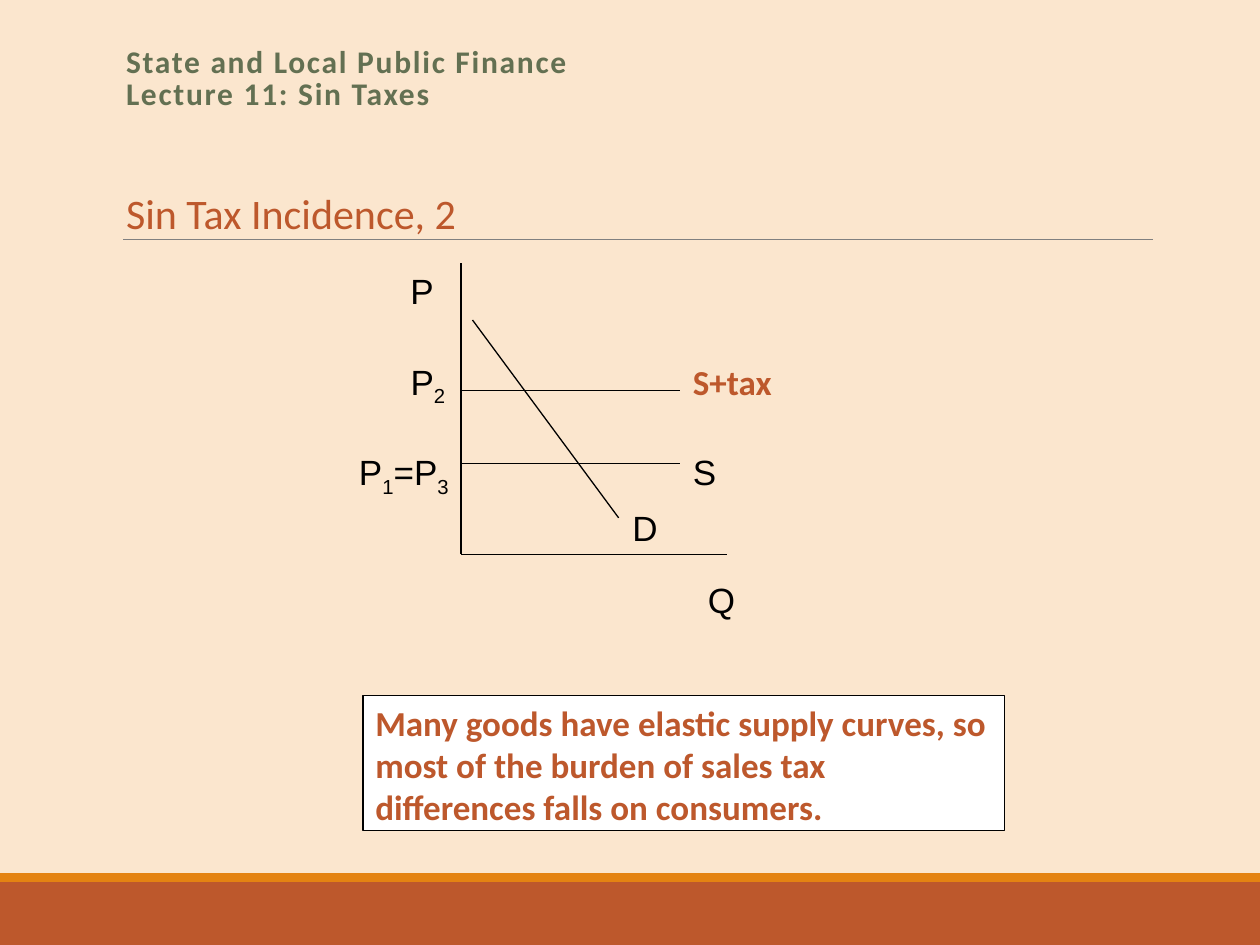
"""Build the sin tax incidence slide with its supply and demand diagram."""
from dataclasses import dataclass

from pptx import Presentation
from pptx import util as u
from pptx.dml.color import RGBColor
from pptx.enum import shapes, text
from pptx.oxml import parse_xml
from pptx.oxml.ns import nsdecls


@dataclass(frozen=True)
class Theme:
    background: str = "FBE6CE"
    accent: str = "BD582C"
    stripe: str = "E48312"
    heading: str = "637052"
    rule: str = "808080"
    ink: str = "000000"
    paper: str = "FFFFFF"
    text_font: str = "Calibri"
    label_font: str = "Arial"
    heading_size: float = 18
    topic_size: float = 24
    label_size: float = 20
    thin: float = 0.5
    line: float = 0.75


@dataclass(frozen=True)
class Area:
    left: float
    top: float
    width: float
    height: float

    def lengths(self) -> tuple:
        return tuple(u.Inches(n) for n in (self.left, self.top, self.width, self.height))


@dataclass(frozen=True)
class Segment:
    start: tuple[float, float]
    end: tuple[float, float]
    color: str
    weight: float


@dataclass(frozen=True)
class Label:
    """Spans alternate between normal and subscript text."""
    area: Area
    spans: tuple[str, ...]
    emphasis: bool = False


THEME = Theme()
ORIGIN_X, ORIGIN_Y = 3.66, 4.4
PRICE_TAXED, PRICE_BASE, SUPPLY_END = 3.1, 3.68, 5.4
TAXED_ROW, BASE_ROW = 2.81, 3.53


def curve(start: tuple[float, float], end: tuple[float, float]) -> Segment:
    return Segment(start, end, THEME.ink, THEME.line)


SEGMENTS = (
    Segment((0.98, 1.9), (9.15, 1.9), THEME.rule, THEME.thin),
    curve((ORIGIN_X, 2.09), (ORIGIN_X, ORIGIN_Y)),
    curve((ORIGIN_X, ORIGIN_Y), (5.77, ORIGIN_Y)),
    curve((ORIGIN_X, PRICE_BASE), (SUPPLY_END, PRICE_BASE)),
    curve((ORIGIN_X, PRICE_TAXED), (SUPPLY_END, PRICE_TAXED)),
    curve((3.75, 2.54), (4.91, 4.11)),
)
LABELS = (
    Label(Area(3.16, 2.09, 0.37, 0.58), ("P",)),
    Label(Area(5.52, 4.54, 0.37, 0.58), ("Q",)),
    Label(Area(SUPPLY_END, BASE_ROW, 0.62, 0.43), ("S",)),
    Label(Area(SUPPLY_END, TAXED_ROW, 1.19, 0.43), ("S+tax",), True),
    Label(Area(4.92, 3.97, 0.62, 0.43), ("D",)),
    Label(Area(2.75, BASE_ROW, 0.99, 0.43), ("P", "1", "=P", "3")),
    Label(Area(3.16, TAXED_ROW, 0.99, 0.43), ("P", "2")),
)


def style(span, size: float, color: str, font: str = THEME.text_font, bold: bool = False) -> None:
    span.font.size = u.Pt(size)
    span.font.name = font
    span.font.bold = bold
    span.font.color.rgb = RGBColor.from_string(color)


def place(box, area: Area) -> None:
    box.left, box.top, box.width, box.height = area.lengths()
    frame = box.text_frame
    frame.word_wrap = True
    frame.auto_size = text.MSO_AUTO_SIZE.NONE
    frame.vertical_anchor = text.MSO_ANCHOR.TOP


def fill_heading(box) -> None:
    place(box, Area(0.9, 0.33, 8.25, 0.65))
    box.text_frame.text = "State and Local Public Finance\vLecture 11: Sin Taxes"
    para = box.text_frame.paragraphs[0]
    para.alignment = text.PP_ALIGN.LEFT
    para.line_spacing = 0.85
    for span in para.runs:
        style(span, THEME.heading_size, THEME.heading, bold=True)
        span.font._element.set("spc", "100")


def fill_topic(box) -> None:
    place(box, Area(1, 1.48, 8.25, 4.4))
    frame = box.text_frame
    frame.margin_left = frame.margin_right = 0
    frame.text = "Sin Tax Incidence, 2"
    para = frame.paragraphs[0]
    para.line_spacing = 0.9
    para.space_before, para.space_after = u.Pt(6.8), u.Pt(1.1)
    properties = para._p.get_or_add_pPr()
    properties.set("marL", str(u.Inches(0.06)))
    properties.set("indent", str(u.Inches(-0.06)))
    properties.append(parse_xml(f"<a:buNone {nsdecls('a')}/>"))
    style(para.runs[0], THEME.topic_size, THEME.accent)


def add_rectangle(page, area: Area, color: str):
    box = page.shapes.add_shape(shapes.MSO_SHAPE.RECTANGLE, *area.lengths())
    box.shadow.inherit = False
    box.fill.solid()
    box.fill.fore_color.rgb = RGBColor.from_string(color)
    box.line.fill.background()
    return box


def add_segment(page, segment: Segment) -> None:
    ends = [u.Inches(n) for n in segment.start + segment.end]
    line = page.shapes.add_connector(shapes.MSO_CONNECTOR.STRAIGHT, *ends)
    line.line.color.rgb = RGBColor.from_string(segment.color)
    line.line.width = u.Pt(segment.weight)
    line._element.spPr.append(parse_xml(f"<a:effectLst {nsdecls('a')}/>"))


def add_label(page, label: Label) -> None:
    box = page.shapes.add_textbox(*label.area.lengths())
    place(box, label.area)
    para = box.text_frame.paragraphs[0]
    color = THEME.accent if label.emphasis else THEME.ink
    font = THEME.text_font if label.emphasis else THEME.label_font
    for index, words in enumerate(label.spans):
        span = para.add_run()
        span.text = words
        style(span, THEME.label_size, color, font, label.emphasis)
        if index % 2:
            span.font._element.set("baseline", "-25000")


def add_conclusion(page) -> None:
    area = Area(2.88, 5.52, 5.09, 1.07)
    box = add_rectangle(page, area, THEME.paper)
    box.line.color.rgb = RGBColor.from_string(THEME.ink)
    box.line.width = u.Pt(THEME.line)
    place(box, area)
    box.text_frame.margin_right = u.Inches(0.12)
    box.text_frame.text = ("Many goods have elastic supply curves, so most of the burden "
                           "of sales tax differences falls on consumers.")
    para = box.text_frame.paragraphs[0]
    para.alignment = text.PP_ALIGN.LEFT
    style(para.runs[0], THEME.label_size, THEME.accent, bold=True)


def main() -> None:
    deck = Presentation()
    deck.slide_width, deck.slide_height = u.Inches(10), u.Inches(7.5)
    page = deck.slides.add_slide(deck.slide_layouts[1])
    page.background.fill.solid()
    page.background.fill.fore_color.rgb = RGBColor.from_string(THEME.background)
    add_rectangle(page, Area(0, 7, 10, 0.5), THEME.accent)
    add_rectangle(page, Area(0, 6.93, 10, 0.07), THEME.stripe)
    fill_heading(page.shapes.title)
    fill_topic(page.placeholders[1])
    for segment in SEGMENTS:
        add_segment(page, segment)
    for label in LABELS:
        add_label(page, label)
    add_conclusion(page)
    deck.save("out.pptx")


if __name__ == "__main__":
    main()
